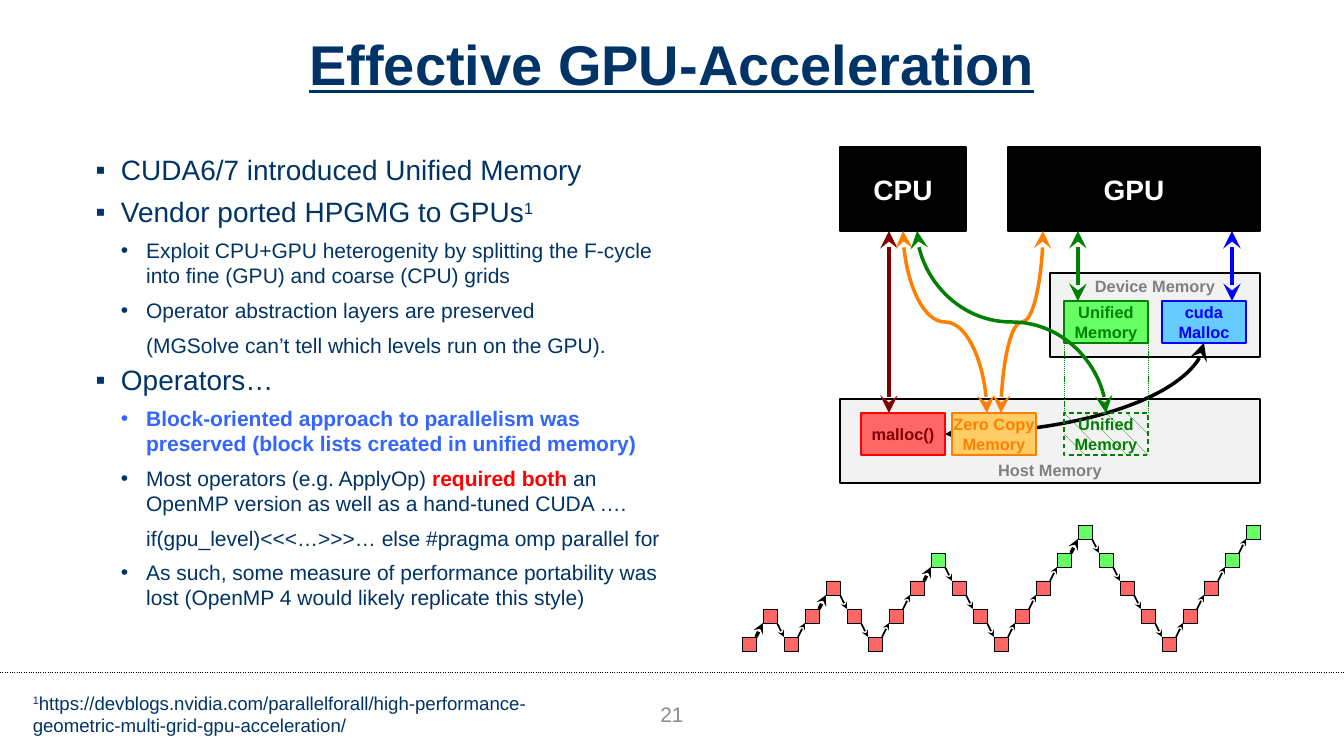
from dataclasses import dataclass
from itertools import accumulate, pairwise
from typing import Optional

from lxml.etree import SubElement
from pptx import Presentation
from pptx.dml.color import RGBColor
from pptx.enum.shapes import MSO_CONNECTOR, MSO_SHAPE
from pptx.enum.text import MSO_ANCHOR, PP_ALIGN
from pptx.oxml.ns import qn
from pptx.util import Emu, Inches, Pt

COLS, ROWS = 192, 108  # twelve grid cells to the inch
NAVY, GRAY, BLACK, WHITE = "003366", "808080", "000000", "FFFFFF"
GREEN, ORANGE, MAROON, BLUE = "008000", "FF8000", "800000", "0000FF"
PALE, LIME, ROSE = "F2F2F2", "66FF66", "FF6666"


@dataclass
class Box:
    at: tuple[int, int, int, int]
    fill: Optional[str]
    line: str = BLACK
    color: str = WHITE
    lines: tuple[str, ...] = ()
    size: int = 14
    anchor: MSO_ANCHOR = MSO_ANCHOR.MIDDLE
    dash: str = ""
    width: float = 1


@dataclass
class Link:
    start: tuple[float, float]
    end: tuple[float, float]
    color: str = BLACK
    width: float = 3
    heads: tuple[str, ...] = ("headEnd", "tailEnd")
    head_size: str = "lg"
    dash: str = ""
    begin_side: Optional[int] = None
    end_side: Optional[int] = None


@dataclass
class Item:
    runs: list[tuple[str, dict]]
    bullet: str = "•"
    level: int = 2
    size: int = 18


PANELS = [
    Box((150, 39, 30, 12), PALE, color=GRAY, lines=("Device Memory",), anchor=MSO_ANCHOR.TOP),
    Box((120, 57, 60, 12), PALE, color=GRAY, lines=("Host Memory",), anchor=MSO_ANCHOR.BOTTOM),
]
UNIFIED = ("Unified", "Memory")
BOXES = [
    Box((120, 21, 18, 12), BLACK, lines=("CPU",), size=24),
    Box((144, 21, 36, 12), BLACK, lines=("GPU",), size=24),
    Box((166, 43, 12, 6), "66CCFF", BLUE, BLUE, ("cuda", "Malloc")),
    Box((123, 59, 12, 6), ROSE, "FF0000", MAROON, ("malloc()",)),
    Box((136, 59, 12, 6), "FFCC66", ORANGE, ORANGE, ("Zero Copy", "Memory")),
    Box((152, 43, 12, 6), LIME, GREEN, GREEN, UNIFIED),
]
MIRROR = Box((152, 59, 12, 6), None, GREEN, GREEN, UNIFIED, dash="dash")
STRAIGHT = [
    Link((176, 33), (176, 43), BLUE),
    Link((127, 33), (127, 59), MAROON),
    Link((154, 33), (154, 43), GREEN),
    *(Link((x, 49), (x, 59), GREEN, 0.25, (), dash="dash") for x in (152, 164)),
]
CURVED = [
    Link((149, 33), (143, 59), ORANGE),
    Link((129, 33), (141, 59), ORANGE),
    Link((131, 33), (158, 59), GREEN),
]
HATCH = [
    Link((158, 59), (164, 65), begin_side=0),
    Link((161, 59), (164, 62), end_side=3),
    Link((155, 59), (161, 65)),
    Link((152, 59), (158, 65), end_side=2),
    Link((152, 62), (155, 65), begin_side=1),
]
LEVELS = [0, 1, 0, 1, 2, 1, 0, 1, 2, 3, 2, 1, 0, 1, 2, 3, 4, 3, 2, 1, 0, 1, 2, 3, 4]
BODY = {
    (12, 21, 84, 7): [Item([("CUDA6/7 introduced Unified Memory", {})], "▪", 1, 24)],
    (12, 27, 84, 25): [
        Item([("Vendor ported HPGMG to GPUs", {}), ("1", {"sup": True})], "▪", 1, 24),
        Item([("Exploit CPU+GPU heterogenity by splitting the F-cycle into fine (GPU) and coarse (CPU) grids", {})]),
        Item([("Operator abstraction layers are preserved", {})]),
        Item([("(MGSolve can’t tell which levels run on the GPU).", {})], ""),
    ],
    (12, 51, 84, 25): [
        Item([("Operators…", {})], "▪", 1, 24),
        Item([("Block-oriented approach to parallelism was preserved (block lists created in unified memory)",
               {"color": "3366FF", "bold": True})]),
        Item([("Most operators (e.g. ApplyOp) ", {}), ("required both", {"color": "FF0000", "bold": True}),
              (" an OpenMP version as well as a hand-tuned CUDA ….", {})]),
        Item([("if(gpu_level)<<<…>>>… else #pragma omp parallel for", {})], ""),
        Item([("As such, some measure of performance portability was lost "
               "(OpenMP 4 would likely replicate this style)", {})]),
    ],
}

prs = Presentation()
prs.slide_width, prs.slide_height = Inches(16), Inches(9)
s = prs.slides.add_slide(prs.slide_layouts[6])


def grid(*cells: float) -> list[Emu]:
    return [Emu(round(c * prs.slide_width / COLS)) for c in cells]


def rgb(color: str) -> RGBColor:
    return RGBColor.from_string(color)


def write(p, text: str, size: float = 18, color: str = NAVY, bold: bool = False,
          underline: bool = False, sup: bool = False) -> None:
    r = p.add_run()
    r.text = text
    f = r.font
    f.name, f.size, f.bold, f.underline = "Arial", Pt(size), bold, underline
    f.color.rgb = rgb(color)
    if sup:
        r._r.get_or_add_rPr().set("baseline", "30000")


def add_text(at: tuple[int, ...], anchor: MSO_ANCHOR = MSO_ANCHOR.MIDDLE):
    tf = s.shapes.add_textbox(*grid(*at)).text_frame
    tf.word_wrap, tf.vertical_anchor = True, anchor
    tf.margin_left = tf.margin_right = Inches(0.14)
    tf.margin_top = tf.margin_bottom = Inches(0.07)
    return tf


def add_items(at: tuple[int, ...], items: list[Item]) -> None:
    tf = add_text(at, MSO_ANCHOR.TOP)
    for i, item in enumerate(items):
        p = tf.add_paragraph() if i else tf.paragraphs[0]
        pPr = p._p.get_or_add_pPr()
        pPr.set("marL", str(Inches(0.3 * item.level)))
        pPr.set("indent", str(Inches(-0.3) if item.bullet else 0))
        if item.bullet:
            SubElement(pPr, qn("a:buFont"), typeface="Arial")
            SubElement(pPr, qn("a:buChar"), char=item.bullet)
        if i:
            p.space_before = Pt(8)
        for text, style in item.runs:
            write(p, text, size=item.size, **style)


def set_line(line, color: str, width: float, dash: str) -> None:
    line.color.rgb, line.width = rgb(color), Pt(width)
    if dash:
        SubElement(line._get_or_add_ln(), qn("a:prstDash"), val=dash)


def add_box(box: Box):
    sp = s.shapes.add_shape(MSO_SHAPE.RECTANGLE, *grid(*box.at))
    sp.shadow.inherit = False
    if box.fill:
        sp.fill.solid()
        sp.fill.fore_color.rgb = rgb(box.fill)
    else:
        sp.fill.background()
    set_line(sp.line, box.line, box.width, box.dash)
    if box.lines:
        tf = sp.text_frame
        tf.word_wrap, tf.vertical_anchor = False, box.anchor
        tf.margin_left = tf.margin_right = 0
        tf.margin_top = tf.margin_bottom = 0 if box.anchor == MSO_ANCHOR.MIDDLE else Inches(0.04)
    for i, line in enumerate(box.lines):
        p = tf.add_paragraph() if i else tf.paragraphs[0]
        p.alignment = PP_ALIGN.CENTER
        write(p, line, size=box.size, color=box.color, bold=True)
    return sp


def add_link(link: Link, kind: MSO_CONNECTOR = MSO_CONNECTOR.STRAIGHT, target=None):
    c = s.shapes.add_connector(kind, *grid(*link.start, *link.end))
    set_line(c.line, link.color, link.width, link.dash)
    for head in link.heads:
        SubElement(c.line._get_or_add_ln(), qn(f"a:{head}"), type="stealth", w=link.head_size, len=link.head_size)
    SubElement(c._element.spPr, qn("a:effectLst"))
    if link.begin_side is not None:
        c.begin_connect(target, link.begin_side)
    if link.end_side is not None:
        c.end_connect(target, link.end_side)
    return c


def add_vertical_curve(link: Link) -> None:
    """Turn a sideways S-curve so that it leaves and arrives vertically."""
    (x1, y1), (x2, y2) = link.start, link.end
    cx, cy, across, down = (x1 + x2) / 2, (y1 + y2) / 2, abs(x2 - x1) / 2, (y2 - y1) / 2
    side = 1 if x2 > x1 else -1
    turned = Link((cx + side * down, cy - across), (cx - side * down, cy + across), link.color)
    c = add_link(turned, MSO_CONNECTOR.CURVE)
    c._element.spPr.find(qn("a:xfrm")).set("rot", str((270 if side > 0 else 90) * 60000))


# Footer rule, title and page number
add_link(Link((0, 96), (COLS, 96), width=0.5, heads=(), dash="dot"))
for at, text, style in [
    ((6, 0, 180, 18), "Effective GPU-Acceleration", dict(size=48, bold=True, underline=True)),
    ((78, 99, 36, 6), "21", dict(color="8C8C8C")),
]:
    p = add_text(at).paragraphs[0]
    p.alignment = PP_ALIGN.CENTER
    write(p, text, **style)

# Memory diagram
for panel in PANELS:
    add_box(panel)
copy_arc = add_link(Link((135, 62), (172, 49)), MSO_CONNECTOR.CURVE)
copy_arc._element.spPr.find(qn("a:prstGeom")).set("prst", "curvedConnector2")
for box in BOXES:
    add_box(box)
mirror = add_box(MIRROR)
for link in STRAIGHT:
    add_link(link)
for link in CURVED:
    add_vertical_curve(link)
for link in HATCH:
    link.color, link.width, link.heads = GREEN, 0.25, ()
    add_link(link, target=mirror)

# F-cycle: an arrow to a new highest level is heavy
nodes = [(106 + 3 * i, 91 - 4 * level) for i, level in enumerate(LEVELS)]
peaks = list(accumulate(LEVELS, max))
for ((x, y), (nx, ny)), (peak, new_peak) in zip(pairwise(nodes), pairwise(peaks)):
    ends = ((x + 2, y), (nx, ny + 2)) if ny < y else ((x + 2, y + 2), (nx, ny))
    add_link(Link(*ends, width=3 if new_peak > peak else 1.5, heads=("tailEnd",), head_size="med"))
for (x, y), level in zip(nodes, LEVELS):
    add_box(Box((x, y, 2, 2), LIME if level >= 3 else ROSE, width=0.75))

# Bullets and footnote
for at, items in BODY.items():
    add_items(at, items)
p = add_text((3, 96, 81, 12)).paragraphs[0]
write(p, "1", size=16, sup=True)
write(p, "https://devblogs.nvidia.com/parallelforall/high-performance-geometric-multi-grid-gpu-acceleration/", size=16)

prs.save("out.pptx")
